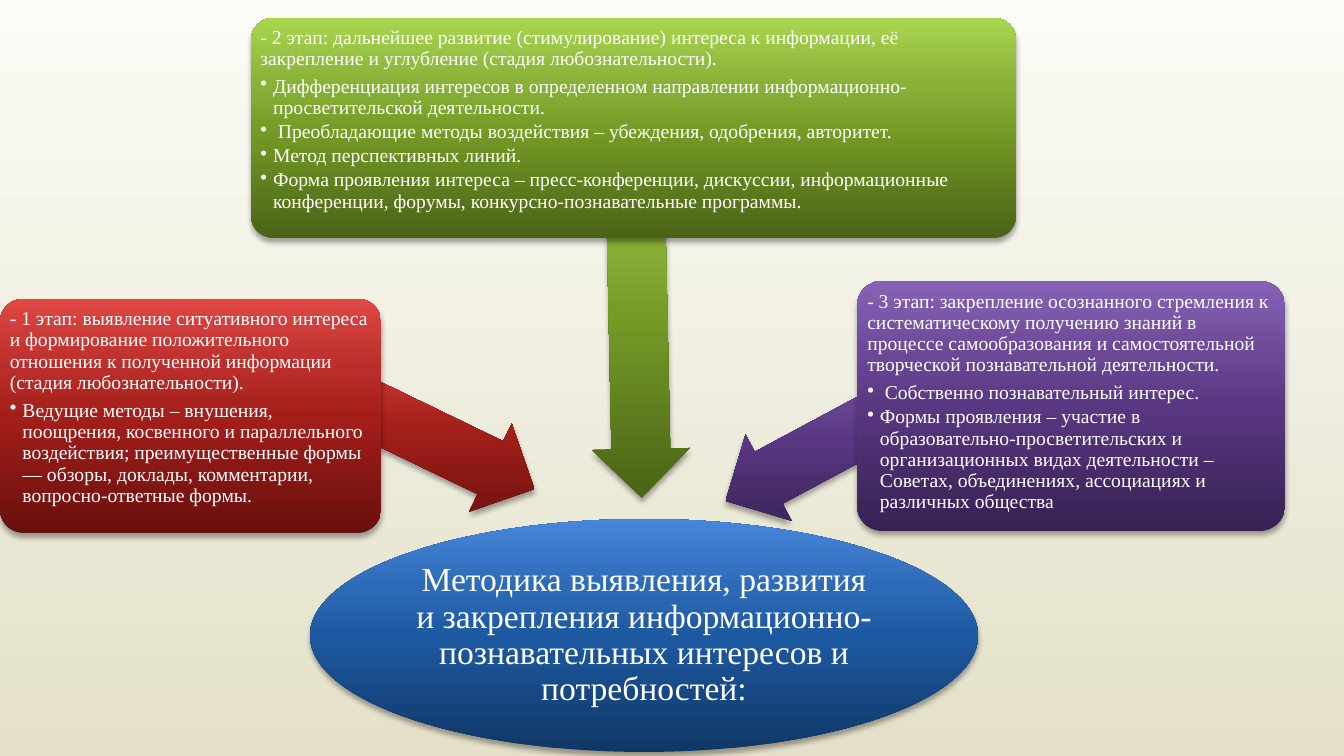
from dataclasses import dataclass

from lxml.etree import SubElement
from pptx import Presentation
from pptx.dml.color import RGBColor
from pptx.enum.shapes import MSO_SHAPE as Shape
from pptx.enum.text import MSO_ANCHOR as Anchor, PP_ALIGN as Align
from pptx.oxml import parse_xml
from pptx.oxml.ns import nsdecls, qn
from pptx.util import Pt

SCALE = 914400 / 100.8
SLIDE_SIZE = (1344, 756)


@dataclass(frozen=True)
class Theme:
    font: str = "Times New Roman"
    text: str = "FFFFFF"
    shadow: str = "000000"
    center_size: int = 24
    stage_size: int = 14
    background: tuple = ("FBFCF6", "E4E0C9")
    blue: tuple = ("0F3766", "1D59A1", "2D6AB6", "4786DB")
    red: tuple = ("68100E", "A41E1A", "B92E2A", "DF4845")
    green: tuple = ("4A6316", "769C27", "89B137", "A9D651")
    purple: tuple = ("372152", "593782", "6A4895", "8763B7")
    stops: tuple = (0, 50, 70, 100)


THEME = Theme()

CENTER = {
    "box": (310, 519, 668, 233),
    "text": "Методика выявления, развития и закрепления информационно-познавательных интересов и потребностей:",
}

STAGES = [
    {
        "colors": THEME.red,
        "arrow": (277, 381, 271, 98),
        "rotation": 205.8,
        "box": (0, 299, 381, 234),
        "heading": "- 1 этап: выявление ситуативного интереса и формирование положительного отношения к полученной информации (стадия любознательности).",
        "bullets": [
            "Ведущие методы – внушения, поощрения, косвенного и параллельного воздействия; преимущественные формы— обзоры, доклады, комментарии, вопросно-ответные формы.",
        ],
    },
    {
        "colors": THEME.green,
        "arrow": (453, 264, 370, 98),
        "rotation": 268.8,
        "box": (251, 18, 765, 220),
        "heading": "- 2 этап: дальнейшее развитие (стимулирование) интереса к информации, её закрепление и углубление (стадия любознательности).",
        "bullets": [
            "Дифференциация интересов в определенном направлении информационно-просветительской деятельности.",
            " Преобладающие методы воздействия – убеждения, одобрения, авторитет.",
            "Метод перспективных линий.",
            "Форма проявления интереса – пресс-конференции, дискуссии, информационные конференции, форумы, конкурсно-познавательные программы.",
        ],
    },
    {
        "colors": THEME.purple,
        "arrow": (710, 390, 262, 98),
        "rotation": 331.8,
        "box": (857, 281, 428, 250),
        "heading": "- 3 этап: закрепление осознанного стремления к систематическому получению знаний в процессе самообразования и самостоятельной творческой познавательной деятельности.",
        "bullets": [
            " Собственно познавательный интерес.",
            "Формы проявления – участие в образовательно-просветительских и организационных видах деятельности – Советах, объединениях, ассоциациях и различных общества",
        ],
    },
]


def px(value):
    return round(value * SCALE)


def add_gradient_shape(slide, kind, box, colors, adjustments=(), rotation=0):
    shape = slide.shapes.add_shape(kind, *map(px, box))
    shape.rotation = rotation
    for index, value in enumerate(adjustments):
        shape.adjustments[index] = value
    shape.line.fill.background()
    shape.shadow.inherit = False
    properties = shape._element.spPr
    stops = "".join(
        f'<a:gs pos="{position * 1000}"><a:srgbClr val="{color}"/></a:gs>'
        for position, color in zip(THEME.stops, colors)
    )
    properties.find(qn("a:prstGeom")).addnext(parse_xml(
        f'<a:gradFill {nsdecls("a")} rotWithShape="0"><a:gsLst>{stops}</a:gsLst>'
        '<a:lin ang="16200000" scaled="0"/></a:gradFill>'
    ))
    properties.find(qn("a:effectLst")).append(parse_xml(
        f'<a:outerShdw {nsdecls("a")} blurRad="{Pt(4)}" dist="{Pt(3)}" dir="5400000" rotWithShape="0">'
        f'<a:srgbClr val="{THEME.shadow}"><a:alpha val="35000"/></a:srgbClr></a:outerShdw>'
    ))
    return shape


def prepare_frame(shape, inset, anchor):
    frame = shape.text_frame
    frame.word_wrap = True
    frame.vertical_anchor = anchor
    frame.margin_left = frame.margin_right = px(inset)
    frame.margin_top = frame.margin_bottom = px(inset)
    return frame


def write(paragraph, text, size=THEME.stage_size, align=Align.LEFT, after=5, bullet=False):
    if bullet:
        paragraph.level = 1
        properties = paragraph._p.get_or_add_pPr()
        properties.set("marL", str(px(12.6)))
        properties.set("indent", str(-px(12.6)))
        SubElement(properties, qn("a:buChar")).set("char", "•")
    paragraph.alignment = align
    paragraph.line_spacing = 0.9
    paragraph.space_after = Pt(after)
    run = paragraph.add_run()
    run.text = text
    run.font.name = THEME.font
    run.font.size = Pt(size)
    run.font.color.rgb = RGBColor.from_string(THEME.text)


def add_center(slide):
    ellipse = add_gradient_shape(slide, Shape.OVAL, CENTER["box"], THEME.blue)
    frame = prepare_frame(ellipse, 2, Anchor.MIDDLE)
    write(frame.paragraphs[0], CENTER["text"], size=THEME.center_size, align=Align.CENTER, after=8)


def add_stage(slide, stage):
    add_gradient_shape(slide, Shape.LEFT_ARROW, stage["arrow"], stage["colors"],
                       adjustments=(0.6, 0.5), rotation=stage["rotation"])
    card = add_gradient_shape(slide, Shape.ROUNDED_RECTANGLE, stage["box"], stage["colors"],
                              adjustments=(0.1,))
    frame = prepare_frame(card, 3, Anchor.TOP)
    write(frame.paragraphs[0], stage["heading"])
    for text in stage["bullets"]:
        write(frame.add_paragraph(), text, after=2, bullet=True)


def main():
    presentation = Presentation()
    presentation.slide_width, presentation.slide_height = map(px, SLIDE_SIZE)
    slide = presentation.slides.add_slide(presentation.slide_layouts[6])
    background = slide.background.fill
    background.gradient()
    background.gradient_angle = 270
    for stop, color in zip(background.gradient_stops, THEME.background):
        stop.color.rgb = RGBColor.from_string(color)
    add_center(slide)
    for stage in STAGES:
        add_stage(slide, stage)
    presentation.save("out.pptx")


if __name__ == "__main__":
    main()
